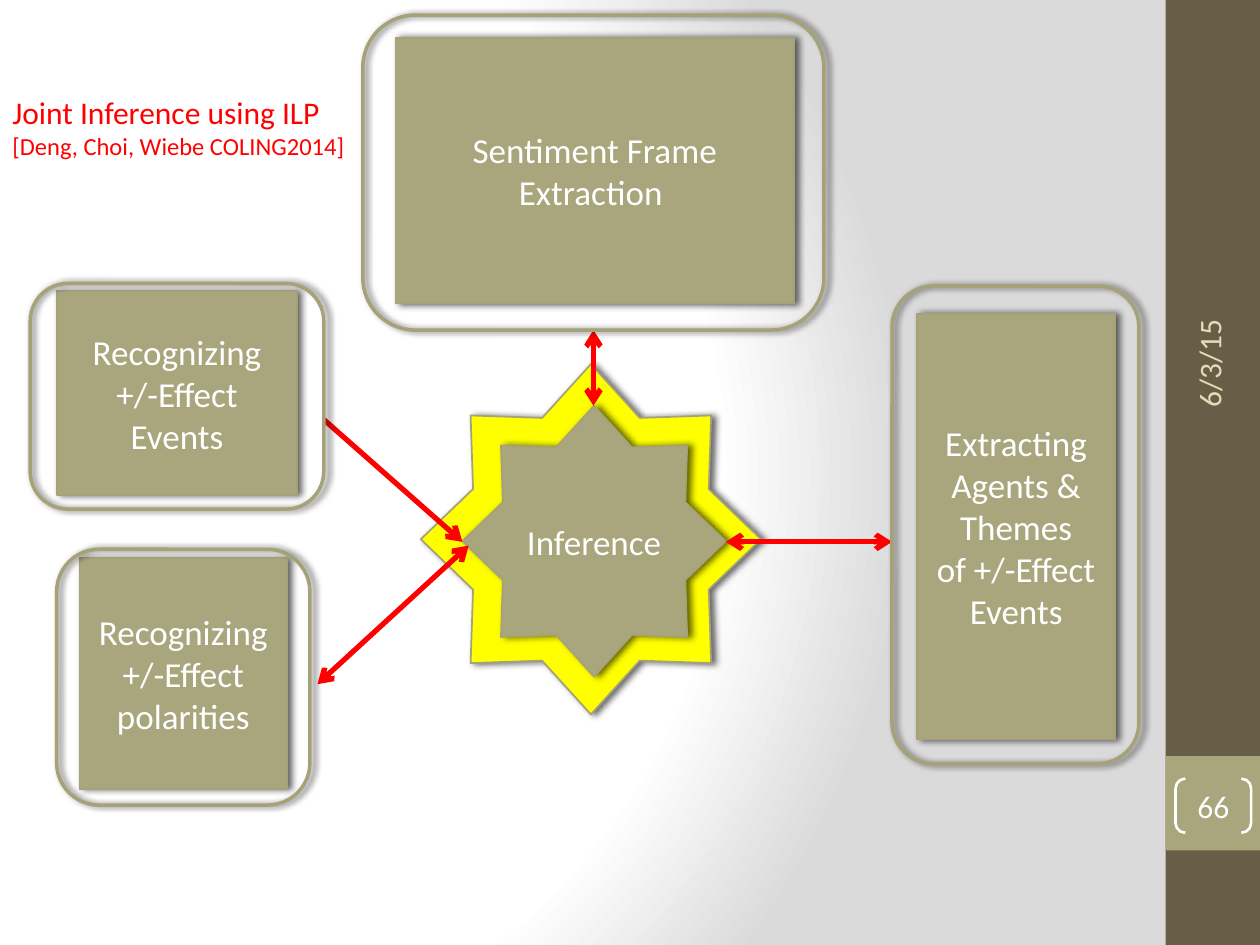
import pptx
import pptx.util
import pptx.oxml
import pptx.oxml.ns
import pptx.dml.color
import pptx.enum.shapes
import pptx.enum.text

Inches, Pt = pptx.util.Inches, pptx.util.Pt
SHAPE = pptx.enum.shapes.MSO_SHAPE
ALIGN = pptx.enum.text.PP_ALIGN
ANCHOR = pptx.enum.text.MSO_ANCHOR

COLORS = {
    "sidebar": "675E47", "olive": "A9A57C", "outline": "A6A278",
    "yellow": "FFFF00", "red": "FF0000", "white": "FFFFFF",
    "date": "DFDCB7", "grey": "DADADA", "black": "000000",
}


def rgb(name):
    return pptx.dml.color.RGBColor.from_string(COLORS[name])


def xml(tag, inner="", **attrs):
    listed = " ".join(f'{key}="{value}"' for key, value in attrs.items())
    space = pptx.oxml.ns.nsdecls("a")
    return pptx.oxml.parse_xml(f"<a:{tag} {space} {listed}>{inner}</a:{tag}>")


class Deck:
    font = "Calibri"

    def __init__(self):
        self.prs = pptx.Presentation()
        self.prs.slide_width, self.prs.slide_height = Inches(10), Inches(7.5)
        self.s = self.prs.slides.add_slide(self.prs.slide_layouts[6])

    def background(self, stops):
        self.s.background.fill.gradient()
        old = self.s.element.xpath("p:cSld/p:bg//a:gradFill")[0]
        listed = "".join(f'<a:gs pos="{pos * 1000}"><a:srgbClr val="{COLORS[c]}"/></a:gs>'
                         for pos, c in stops)
        old.getparent().replace(old, xml(
            "gradFill",
            f'<a:gsLst>{listed}</a:gsLst><a:path path="circle">'
            '<a:fillToRect l="20000" t="50000" r="100000" b="50000"/></a:path>',
            rotWithShape=1))

    def set_lines(self, sp, lines, color, sizes, align=ALIGN.CENTER):
        tf = sp.text_frame
        for i, line in enumerate(lines):
            p = tf.paragraphs[0] if i == 0 else tf.add_paragraph()
            p.text, p.alignment = line, align
            p.font.name, p.font.size = self.font, Pt(sizes[min(i, len(sizes) - 1)])
            p.font.color.rgb = rgb(color)
        return tf

    def shape(self, kind, at, fill=None, line=None, width=1, shadow=False,
              lines=(), size=20):
        sp = self.s.shapes.add_shape(kind, *map(Inches, at))
        if fill:
            sp.fill.solid()
            sp.fill.fore_color.rgb = rgb(fill)
        else:
            sp.fill.background()
        if line:
            sp.line.color.rgb, sp.line.width = rgb(line), Pt(width)
        else:
            sp.line.fill.background()
        sp.shadow.inherit = False
        if shadow:
            sp.element.xpath("p:spPr/a:effectLst")[0].append(xml(
                "outerShdw",
                f'<a:srgbClr val="{COLORS["black"]}"><a:alpha val="60000"/></a:srgbClr>',
                blurRad=Pt(4), dist=Pt(2), dir=0, rotWithShape=0))
        tf = self.set_lines(sp, lines, "white", [size])
        tf.word_wrap, tf.vertical_anchor = True, ANCHOR.MIDDLE
        return sp

    def card(self, kind, at, lines=(), fill="olive"):
        return self.shape(kind, at, fill, "outline", 1, True, lines)

    def frame(self, at):
        return self.shape(SHAPE.ROUNDED_RECTANGLE, at, None, "outline", 2, True)

    def text(self, at, lines, color, sizes, wrap=True, rotation=0):
        sp = self.s.shapes.add_textbox(*map(Inches, at))
        sp.rotation = rotation
        tf = self.set_lines(sp, lines, color, sizes, ALIGN.LEFT)
        tf.word_wrap = wrap

    def arrow(self, start, end, ends=("headEnd", "tailEnd")):
        sp = self.s.shapes.add_connector(
            pptx.enum.shapes.MSO_CONNECTOR.STRAIGHT, *map(Inches, start + end))
        sp.line.color.rgb, sp.line.width = rgb("red"), Pt(3)
        ln = sp.element.xpath("p:spPr/a:ln")[0]
        for tag in ends:
            ln.append(xml(tag, type="arrow"))
        ln.addnext(xml("effectLst"))


def main():
    d = Deck()
    d.background([(0, "white"), (75, "white"), (100, "grey")])

    # Sidebar with date and slide number
    d.shape(SHAPE.RECTANGLE, (9.25, 0, 0.75, 7.5), "sidebar")
    d.shape(SHAPE.RECTANGLE, (9.25, 6, 0.75, 0.75), "olive")
    d.text((8.26, 1.8, 2.67, 0.4), ["6/3/15"], "date", [18], rotation=270)
    number = d.shape(SHAPE.DOUBLE_BRACKET, (9.33, 6.18, 0.6, 0.43), None,
                     "white", 1.5, lines=["66"], size=18)
    number.adjustments[0] = 0.18
    tf = number.text_frame
    tf.margin_left = tf.margin_right = tf.margin_top = tf.margin_bottom = 0

    # Inference star on its yellow halo
    d.card(SHAPE.STAR_8_POINT, (3.34, 2.89, 2.7, 2.78), fill="yellow")
    d.card(SHAPE.STAR_8_POINT, (3.67, 3.22, 2.09, 2.15), ["Inference"])

    # Arrows between the star and the components
    d.arrow((4.71, 2.62), (4.71, 3.22))
    d.arrow((5.76, 4.3), (7.08, 4.3))
    d.arrow((3.67, 4.3), (2.57, 3.33), ends=("headEnd",))

    # Caption
    d.text((0, 0.69, 2.9, 0.64),
           ["Joint Inference using ILP", "[Deng, Choi, Wiebe COLING2014]"],
           "red", [18, 14], wrap=False)

    # Components: frame, box, text
    components = [
        ((2.88, 0.12, 3.66, 2.5), (3.14, 0.3, 3.16, 2.11),
         ["Sentiment Frame Extraction "]),
        ((0.24, 2.25, 2.33, 1.79), (0.45, 2.31, 1.91, 1.62),
         ["Recognizing", "+/-Effect", "Events"]),
        ((7.08, 2.27, 1.96, 3.79), (7.28, 2.49, 1.57, 3.38),
         ["Extracting", "Agents &", "Themes", "of +/-Effect", "Events"]),
        ((0.45, 4.36, 2.01, 2.03), (0.63, 4.43, 1.65, 1.83),
         ["Recognizing", "+/-Effect", "polarities"]),
    ]
    for frame, box, lines in components:
        d.card(SHAPE.RECTANGLE, box, lines)
        d.frame(frame)

    # Arrow to the polarities component, in front of its frame
    d.arrow((3.72, 4.33), (2.52, 5.43))
    d.prs.save("out.pptx")


if __name__ == "__main__":
    main()
